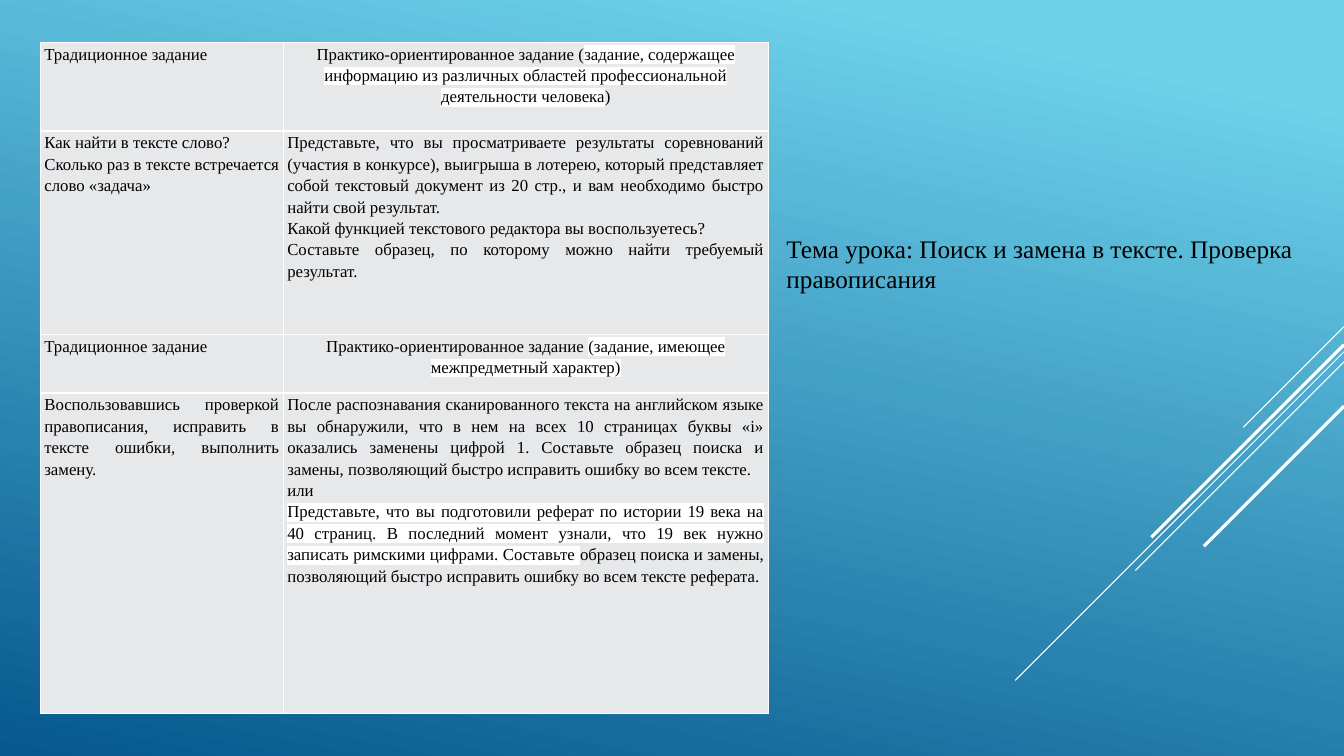
import pptx
import pptx.util
import pptx.dml.color
import pptx.enum.shapes
import pptx.enum.text
import lxml.etree
from pptx.oxml.ns import qn

FONT = "Times New Roman"
WIDE, HIGH = 1333, 750
ALIGN = pptx.enum.text.PP_ALIGN

TOPIC = "Тема урока: Поиск и замена в тексте. Проверка правописания"
COLS = [241, 481]
ROWS = [88, 202, 58, 318]
TASKS = [
    (["Традиционное задание"],
     ["Практико-ориентированное задание (|задание, содержащее информацию "
      "из различных областей профессиональной деятельности человека|)"]),
    (["Как найти в тексте слово?",
      "Сколько раз в тексте встречается слово «задача»"],
     ["Представьте, что вы просматриваете результаты соревнований (участия в "
      "конкурсе), выигрыша в лотерею, который представляет собой текстовый "
      "документ из 20 стр., и вам необходимо быстро найти свой результат.",
      "Какой функцией текстового редактора вы воспользуетесь?",
      "Составьте образец, по которому можно найти требуемый результат."]),
    (["Традиционное задание"],
     ["Практико-ориентированное задание |(задание, имеющее межпредметный "
      "характер)|"]),
    (["Воспользовавшись проверкой правописания, исправить в тексте ошибки, "
      "выполнить замену."],
     ["После распознавания сканированного текста на английском языке вы "
      "обнаружили, что в нем на всех 10 страницах буквы «і» оказались заменены "
      "цифрой 1. Составьте образец поиска и замены, позволяющий быстро "
      "исправить ошибку во всем тексте.",
      "или",
      "|Представьте, что вы подготовили реферат по истории 19 века на 40 "
      "страниц. В последний момент узнали, что 19 век нужно записать римскими "
      "цифрами. Составьте |образец поиска и замены, позволяющий быстро "
      "исправить ошибку во всем тексте реферата."]),
]
RAYS = [(324, 100, 0.75), (349, 326, 0.75), (359, 207, 0.75),
        (342, 191, 2.25), (403, 139, 2.25)]


def px(n):
    return pptx.util.Emu(n * 9144)


def color(code):
    return pptx.dml.color.RGBColor.from_string(code)


def style(para, size, align):
    para.alignment = align
    para.font.name = FONT
    para.font.size = pptx.util.Pt(size)
    para.font.color.rgb = color("000000")


def solid(parent, tag, code):
    node = lxml.etree.SubElement(parent, qn(tag))
    lxml.etree.SubElement(node, qn("a:srgbClr"), val=code)


def paint(slide):
    fill = slide.background.fill
    fill.gradient()
    fill.gradient_angle = 258
    stops = [(0.1, "6ED2EB"), (1, "06588E")]
    for stop, (place, code) in zip(fill.gradient_stops, stops):
        stop.position = place
        stop.color.rgb = color(code)


def rays(slide, right):
    for top, size, weight in RAYS:
        line = slide.shapes.add_connector(
            pptx.enum.shapes.MSO_CONNECTOR.STRAIGHT,
            px(right), px(top), px(right - size), px(top + size))
        line.line.color.rgb = color("FFFFFF")
        line.line.width = pptx.util.Pt(weight)
        lxml.etree.SubElement(line._element.spPr, qn("a:effectLst"))


def border(cell):
    props = cell._tc.get_or_add_tcPr()
    for side in ("a:lnL", "a:lnR", "a:lnT", "a:lnB"):
        edge = lxml.etree.SubElement(props, qn(side), w="12700")
        solid(edge, "a:solidFill", "FFFFFF")


def write(para, text, align):
    style(para, 12, align)
    para.line_spacing = 1.15
    for i, part in enumerate(text.split("|")):
        if part:
            run = para.add_run()
            run.text = part
            if i % 2:
                solid(run._r.get_or_add_rPr(), "a:highlight", "FFFFFF")


def fill_cell(cell, texts, align):
    border(cell)
    cell.fill.solid()
    cell.fill.fore_color.rgb = color("E7E8EA")
    cell.margin_left = cell.margin_right = px(4)
    cell.margin_top = cell.margin_bottom = 0
    frame = cell.text_frame
    for i, text in enumerate(texts):
        para = frame.add_paragraph() if i else frame.paragraphs[0]
        write(para, text, align)


def tasks(slide, left, top):
    table = slide.shapes.add_table(
        len(ROWS), len(COLS), px(left), px(top),
        px(sum(COLS)), px(sum(ROWS))).table
    table.first_row = table.horz_banding = False
    for col, size in zip(table.columns, COLS):
        col.width = px(size)
    for r, (row, size) in enumerate(zip(table.rows, ROWS)):
        row.height = px(size)
        for c, texts in enumerate(TASKS[r]):
            head = r % 2 == 0 and c == 1
            fill_cell(table.cell(r, c), texts,
                      ALIGN.CENTER if head else ALIGN.JUSTIFY)


def topic(slide, left, top, width, height):
    title = slide.shapes.title
    title.left, title.top = px(left), px(top)
    title.width, title.height = px(width), px(height)
    frame = title.text_frame
    frame.text = TOPIC
    frame.word_wrap = True
    frame.auto_size = pptx.enum.text.MSO_AUTO_SIZE.SHAPE_TO_FIT_TEXT
    frame.vertical_anchor = pptx.enum.text.MSO_ANCHOR.TOP
    style(frame.paragraphs[0], 18, ALIGN.LEFT)


def main():
    deck = pptx.Presentation()
    deck.slide_width, deck.slide_height = px(WIDE), px(HIGH)
    slide = deck.slides.add_slide(deck.slide_layouts[5])
    paint(slide)
    rays(slide, WIDE)
    tasks(slide, 40, 42)
    topic(slide, 770, 226, 626, 71)
    deck.save("out.pptx")


if __name__ == "__main__":
    main()
